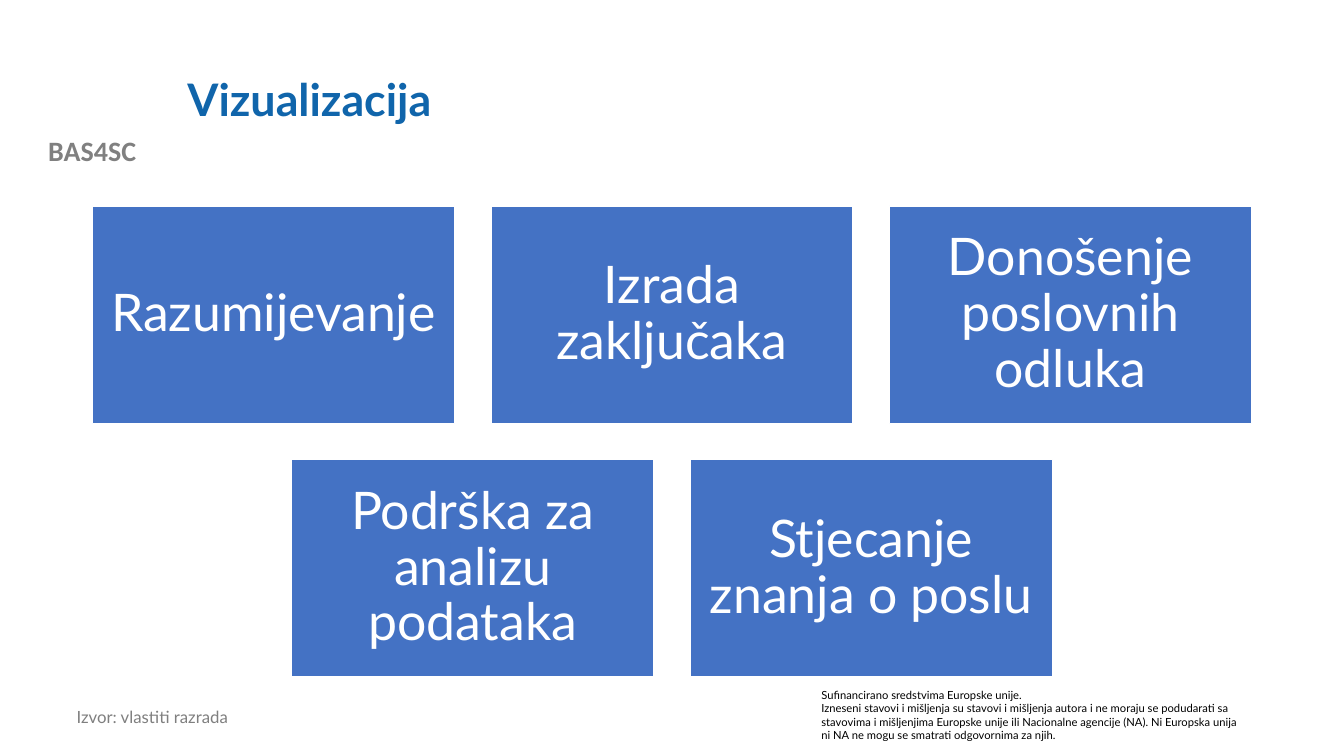
from pptx import Presentation
from pptx.dml.color import RGBColor
from pptx.enum.shapes import MSO_SHAPE
from pptx.enum.text import MSO_ANCHOR, PP_ALIGN
from pptx.util import Cm, Pt

RECTANGLE = MSO_SHAPE.RECTANGLE
LEFT, CENTER = PP_ALIGN.LEFT, PP_ALIGN.CENTER
TOP, MIDDLE = MSO_ANCHOR.TOP, MSO_ANCHOR.MIDDLE

COLORS = {
    "title": "1065AB",
    "card": "4472C4",
    "white": "FFFFFF",
    "project": "808080",
    "source": "7F7F7F",
    "black": "000000",
}

# Sizes in centimetres
SLIDE_WIDTH, SLIDE_HEIGHT = 33.87, 19.05
CARD_WIDTH, CARD_HEIGHT, CARD_GAP = 9.13, 5.48, 0.91
CARDS_TOP = 5.19
CARD_MARGIN = 0.38

CARD_ROWS = [
    ["Razumijevanje", "Izrada zaključaka", "Donošenje poslovnih odluka"],
    ["Podrška za analizu podataka", "Stjecanje znanja o poslu"],
]
DISCLAIMER = [
    "Sufinancirano sredstvima Europske unije.",
    "Izneseni stavovi i mišljenja su stavovi i mišljenja autora i ne moraju se "
    "podudarati sa stavovima i mišljenjima Europske unije ili Nacionalne agencije "
    "(NA). Ni Europska unija ni NA ne mogu se smatrati odgovornima za njih.",
]


def color(name):
    return RGBColor.from_string(COLORS[name])


def write_text(shape, *lines, size, color_name, font="Lato", bold=False,
               align=LEFT, anchor=TOP, line_spacing=1.0):
    frame = shape.text_frame
    frame.word_wrap = True
    frame.vertical_anchor = anchor
    frame.text = "\n".join(lines)
    for paragraph in frame.paragraphs:
        paragraph.alignment = align
        paragraph.line_spacing = line_spacing
        paragraph.font.name = font
        paragraph.font.size = Pt(size)
        paragraph.font.bold = bold
        paragraph.font.color.rgb = color(color_name)


def add_text(slide, left, top, width, height, *lines, **text_format):
    box = slide.shapes.add_textbox(Cm(left), Cm(top), Cm(width), Cm(height))
    write_text(box, *lines, **text_format)


def set_title(slide, text):
    title = slide.shapes.title
    title.left, title.top = Cm(4.47), Cm(1.02)
    title.width, title.height = Cm(27.08), Cm(3.1)
    write_text(title, text, size=32, color_name="title", bold=True,
               anchor=MIDDLE, line_spacing=0.9)


def add_card(slide, left, top, text):
    card = slide.shapes.add_shape(RECTANGLE, Cm(left), Cm(top),
                                  Cm(CARD_WIDTH), Cm(CARD_HEIGHT))
    card.shadow.inherit = False
    card.fill.solid()
    card.fill.fore_color.rgb = color("card")
    card.line.color.rgb = color("white")
    card.line.width = Pt(1)
    frame = card.text_frame
    frame.margin_left = frame.margin_right = Cm(CARD_MARGIN)
    frame.margin_top = frame.margin_bottom = Cm(CARD_MARGIN)
    write_text(card, text, size=37, color_name="white", align=CENTER,
               anchor=MIDDLE, line_spacing=0.9)


def add_card_rows(slide, rows):
    # Each row is centred on the slide
    for row_index, row in enumerate(rows):
        row_width = len(row) * (CARD_WIDTH + CARD_GAP) - CARD_GAP
        row_left = (SLIDE_WIDTH - row_width) / 2
        top = CARDS_TOP + row_index * (CARD_HEIGHT + CARD_GAP)
        for column, text in enumerate(row):
            add_card(slide, row_left + column * (CARD_WIDTH + CARD_GAP), top, text)


def main():
    presentation = Presentation()
    presentation.slide_width = Cm(SLIDE_WIDTH)
    presentation.slide_height = Cm(SLIDE_HEIGHT)
    title_only = presentation.slide_layouts.get_by_name("Title Only")
    slide = presentation.slides.add_slide(title_only)

    # Heading
    set_title(slide, "Vizualizacija")
    add_text(slide, 0, 3.25, 4.65, 1.12, "BAS4SC", size=20, font="Calibri",
             color_name="project", bold=True, align=CENTER)

    # Purposes of visualisation
    add_card_rows(slide, CARD_ROWS)

    # Footer
    add_text(slide, 1.68, 17.73, 12.73, 0.94, "Izvor: vlastiti razrada",
             size=12, color_name="source", line_spacing=0.9)
    add_text(slide, 20.45, 17.22, 11.1, 1.63, *DISCLAIMER,
             size=8, color_name="black")

    presentation.save("out.pptx")


if __name__ == "__main__":
    main()
